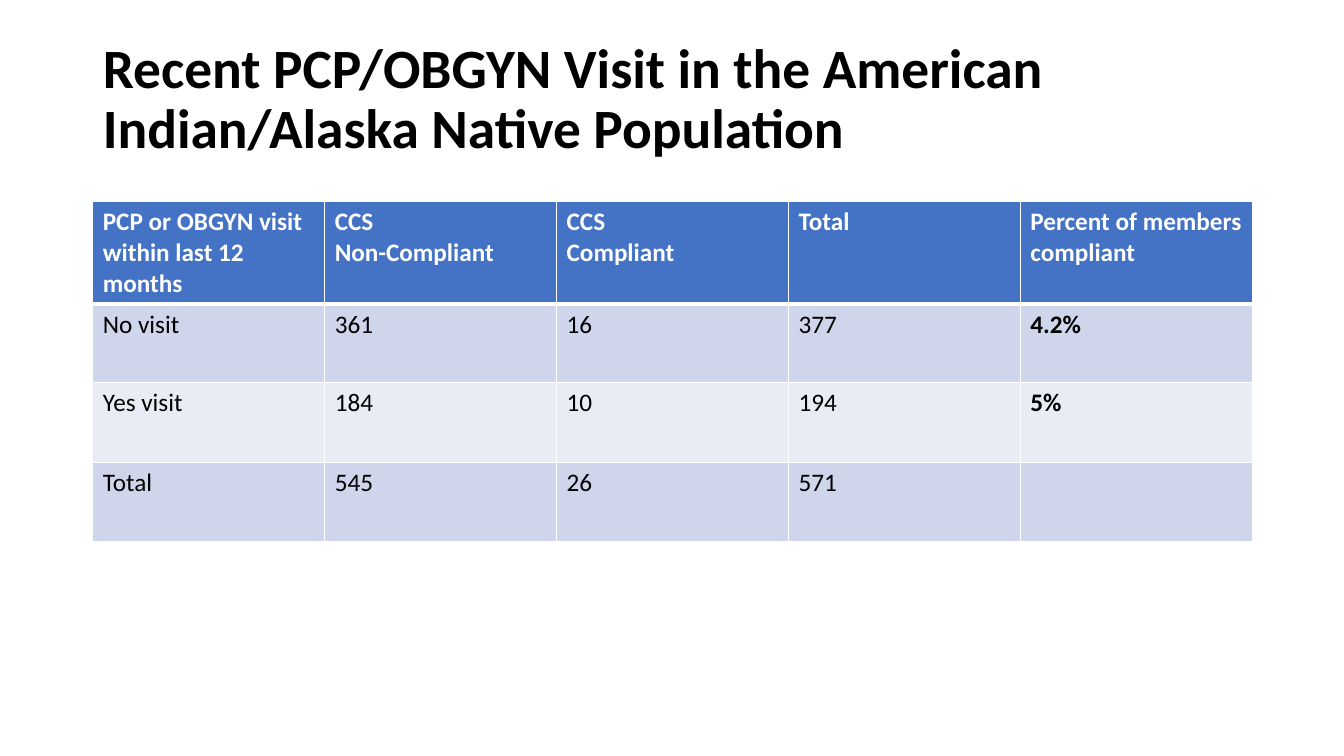
from dataclasses import dataclass

from lxml import etree
from pptx import Presentation
from pptx.dml.color import RGBColor
from pptx.enum.text import MSO_ANCHOR, MSO_AUTO_SIZE, PP_ALIGN
from pptx.oxml.ns import qn
from pptx.util import Inches, Pt

HEADING = "Recent PCP/OBGYN Visit in the American Indian/Alaska Native Population"
VISITS = [
    ("PCP or OBGYN visit within last 12 months", "CCS\nNon-Compliant",
     "CCS\nCompliant", "Total", "Percent of members compliant"),
    ("No visit", "361", "16", "377", "4.2%"),
    ("Yes visit", "184", "10", "194", "5%"),
    ("Total", "545", "26", "571", ""),
]
ROW_HEIGHTS = [1.0, 0.78, 0.79, 0.79]
LEFT, WIDTH = 0.92, 11.5


@dataclass(frozen=True)
class Theme:
    font: str = "Calibri"
    ink: str = "000000"
    paper: str = "FFFFFF"
    header: str = "4472C4"
    bands: tuple = ("E9EBF5", "CFD5EA")
    heading_size: float = 39.6
    cell_size: float = 18
    rule: float = 1
    header_rule: float = 3


THEME = Theme()


def format_text(frame, size, color, bold):
    for paragraph in frame.paragraphs:
        paragraph.alignment = PP_ALIGN.LEFT
        for font in [paragraph.font] + [run.font for run in paragraph.runs]:
            font.name = THEME.font
            font.size = Pt(size)
            font.bold = bold
            font.color.rgb = RGBColor.from_string(color)


def draw_borders(cell, top, bottom):
    properties = cell._tc.get_or_add_tcPr()
    widths = {"a:lnL": THEME.rule, "a:lnR": THEME.rule, "a:lnT": top, "a:lnB": bottom}
    for position, (side, width) in enumerate(widths.items()):
        line = etree.Element(qn(side), w=str(Pt(width)))
        fill = etree.SubElement(line, qn("a:solidFill"))
        etree.SubElement(fill, qn("a:srgbClr"), val=THEME.paper)
        properties.insert(position, line)


def add_heading(slide):
    heading = slide.shapes.title
    heading.left, heading.top = Inches(LEFT), Inches(0.4)
    heading.width, heading.height = Inches(WIDTH), Inches(1.19)
    frame = heading.text_frame
    frame.text = HEADING
    frame.word_wrap = True
    frame.auto_size = MSO_AUTO_SIZE.NONE
    frame.vertical_anchor = MSO_ANCHOR.MIDDLE
    frame.paragraphs[0].line_spacing = 0.9
    format_text(frame, THEME.heading_size, THEME.ink, True)


def add_visits(slide):
    columns = len(VISITS[0])
    visits = slide.shapes.add_table(
        len(VISITS), columns, Inches(LEFT), Inches(2),
        Inches(WIDTH), Inches(sum(ROW_HEIGHTS))).table
    for column in visits.columns:
        column.width = Inches(WIDTH / columns)
    for r, (values, height) in enumerate(zip(VISITS, ROW_HEIGHTS)):
        visits.rows[r].height = Inches(height)
        is_header = r == 0
        fill = THEME.header if is_header else THEME.bands[r % 2]
        color = THEME.paper if is_header else THEME.ink
        top = THEME.header_rule if r == 1 else THEME.rule
        bottom = THEME.header_rule if is_header else THEME.rule
        for c, value in enumerate(values):
            cell = visits.cell(r, c)
            cell.text_frame.text = value
            cell.fill.solid()
            cell.fill.fore_color.rgb = RGBColor.from_string(fill)
            format_text(cell.text_frame, THEME.cell_size, color,
                        is_header or c == columns - 1)
            draw_borders(cell, top, bottom)


def main():
    deck = Presentation()
    deck.slide_width, deck.slide_height = Inches(13.33), Inches(7.5)
    slide = deck.slides.add_slide(deck.slide_layouts[5])
    add_heading(slide)
    add_visits(slide)
    deck.save("out.pptx")


if __name__ == "__main__":
    main()
